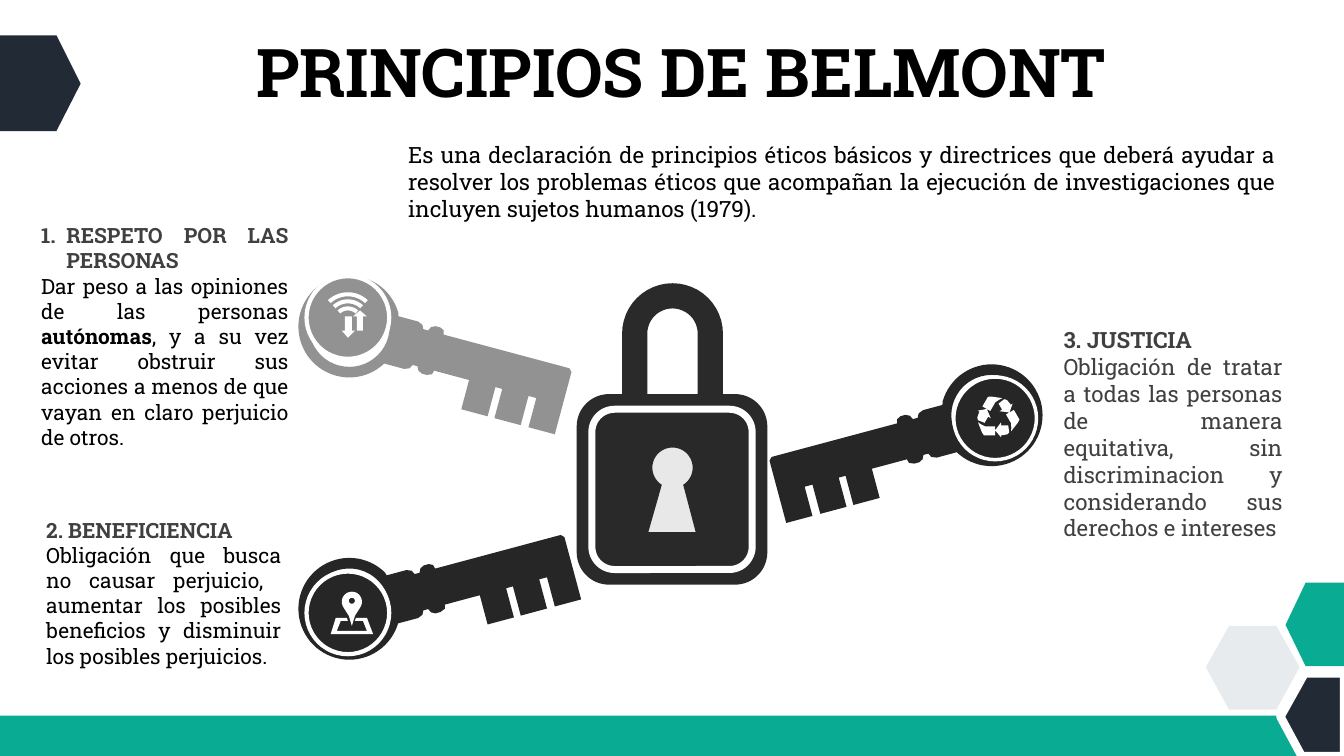
import math

import pptx
import pptx.dml.color
import pptx.enum.shapes
import pptx.enum.text
import pptx.oxml
import pptx.oxml.ns
import pptx.util
from pptx.util import Inches

SHAPE = pptx.enum.shapes.MSO_SHAPE
ALIGN = pptx.enum.text.PP_ALIGN
FONT = "Roboto Slab"
GREEN, NAVY, DARK, GREY, WHITE = "09AB93", "222A35", "262626", "929292", "FFFFFF"
BLACK, HEADING = "000000", "404040"
KEY_LENGTH = 2.75
KEY_BLADE = [
    (0.95, 0.28), (1.15, 0.28), (1.2, 0.3), (1.22, 0.34), (1.27, 0.34), (1.29, 0.3),
    (1.33, 0.28), (1.38, 0.28), (1.42, 0.3), (1.43, 0.34), (2.72, 0.34), (2.75, 0.37),
    (2.75, 1.01), (2.48, 1.01), (2.48, 0.71), (2.4, 0.71), (2.4, 1.01), (2.13, 1.01),
    (2.13, 0.71), (2.06, 0.71), (2.06, 1.01), (1.79, 1.01), (1.79, 0.71), (1.43, 0.71),
    (1.42, 0.75), (1.37, 0.77), (1.32, 0.77), (1.28, 0.75), (1.26, 0.71), (1.21, 0.71),
    (1.19, 0.75), (1.14, 0.77), (0.94, 0.77),
]


def rgb(color):
    return pptx.dml.color.RGBColor.from_string(color)


def arc(cx, cy, r, start, end, steps=24):
    angles = [math.radians(start + (end - start) * i / steps) for i in range(steps + 1)]
    return [(cx + r * math.cos(a), cy + r * math.sin(a)) for a in angles]


def style(sp, fill, line=None, width=0, opacity=100):
    sp.shadow.inherit = False
    sp.fill.solid()
    sp.fill.fore_color.rgb = rgb(fill)
    if opacity < 100:
        clr = sp.fill._xPr.find(".//" + pptx.oxml.ns.qn("a:srgbClr"))
        alpha = clr.makeelement(pptx.oxml.ns.qn("a:alpha"), {"val": str(opacity * 1000)})
        clr.append(alpha)
    if line:
        sp.line.color.rgb = rgb(line)
        sp.line.width = pptx.util.Pt(width)
    else:
        sp.line.fill.background()
    return sp


def add_outline(s, contours, fill, at=(0, 0), **look):
    builder = None
    for contour in contours:
        points = [(Inches(x), Inches(y)) for x, y in contour]
        if builder is None:
            builder = s.shapes.build_freeform(*points[0])
        else:
            builder.move_to(*points[0])
        builder.add_line_segments(points[1:], close=True)
    sp = builder.convert_to_shape(Inches(at[0]), Inches(at[1]))
    return style(sp, fill, **look)


def add_preset(s, kind, x, y, w, h, fill, **look):
    sp = s.shapes.add_shape(kind, Inches(x), Inches(y), Inches(w), Inches(h))
    return style(sp, fill, **look)


def add_text(s, x, y, w, h, paragraphs, size, align=ALIGN.JUSTIFY):
    tf = s.shapes.add_textbox(Inches(x), Inches(y), Inches(w), Inches(h)).text_frame
    tf.word_wrap = True
    for i, runs in enumerate(paragraphs):
        p = tf.paragraphs[0] if i == 0 else tf.add_paragraph()
        p.alignment = align
        for text, color, bold in runs:
            r = p.add_run()
            r.text = text
            r.font.name = FONT
            r.font.size = pptx.util.Pt(size)
            r.font.bold = bold
            r.font.color.rgb = rgb(color)
    return tf


def number(p):
    pPr = p._p.get_or_add_pPr()
    pPr.set("marL", str(Inches(0.25)))
    pPr.set("indent", str(-Inches(0.25)))
    bullet = pPr.makeelement(pptx.oxml.ns.qn("a:buAutoNum"), {"type": "arabicPeriod"})
    pPr.append(bullet)


def add_key(s, x, y, angle, color, badge, ring, mirrored=False):
    contours = [KEY_BLADE + arc(0.505, 0.505, 0.505, 31, 329, 60),
                arc(0.505, 0.505, 0.4, 0, 360, 48)]
    if mirrored:
        contours = [[(KEY_LENGTH - px, py) for px, py in c] for c in contours]
    add_outline(s, contours, color, (x, y)).rotation = angle
    add_preset(s, SHAPE.OVAL, *badge, 0.82, 0.82, color, line=WHITE, width=ring).rotation = 15


def add_padlock(s):
    body = (arc(6.67, 3.31, 0.5, 180, 360) + [(7.17, 3.91)]
            + arc(7.29, 4.23, 0.32, -90, 0) + arc(7.29, 5.48, 0.32, 0, 90)
            + arc(6.04, 5.48, 0.32, 90, 180) + arc(6.04, 4.23, 0.32, 180, 270)
            + [(6.17, 3.91)])
    shackle = arc(6.67, 3.31, 0.25, 180, 360) + [(6.92, 3.91), (6.42, 3.91)]
    keyhole = arc(6.67, 4.64, 0.2, 122, 418, 36) + [(6.9, 5.28), (6.43, 5.28)]
    add_outline(s, [body, shackle, keyhole], DARK, opacity=98)
    frame = add_preset(s, SHAPE.ROUNDED_RECTANGLE, 5.87, 4.06, 1.59, 1.59, DARK,
                       line=WHITE, width=5, opacity=10)
    frame.adjustments[0] = 0.142


def add_signal_icon(s):
    waves = [arc(3.45, 3.19, r, 227, 313) + arc(3.45, 3.19, r - 0.04, 313, 227)
             for r in (0.29, 0.22, 0.15)]
    down = [(3.42, 3.14), (3.49, 3.14), (3.49, 3.28), (3.52, 3.28), (3.45, 3.35),
            (3.39, 3.28), (3.42, 3.28)]
    up = [(3.57, 3.08), (3.64, 3.14), (3.6, 3.14), (3.6, 3.28), (3.54, 3.28),
          (3.54, 3.14), (3.5, 3.14)]
    add_outline(s, waves + [down, up], WHITE)


def add_map_icon(s):
    base = [(3.33, 6.13), (3.44, 6.13), (3.45, 6.16), (3.38, 6.16), (3.34, 6.26),
            (3.64, 6.26), (3.6, 6.16), (3.52, 6.16), (3.53, 6.13), (3.64, 6.13),
            (3.7, 6.29), (3.28, 6.29)]
    pin = arc(3.49, 5.97, 0.1, 145, 395) + [(3.52, 6.11), (3.49, 6.21), (3.46, 6.11)]
    add_outline(s, [base, pin, arc(3.49, 5.96, 0.03, 0, 360)], WHITE)


def add_recycle_icon(s):
    head = [(0.04, 0.05), (0.04, 0.08), (0.11, 0.08), (0.12, 0.15), (0.1, 0.17),
            (0.04, 0.18), (0.04, 0.2), (-0.02, 0.13)]
    band = [(-0.19, 0.05), (-0.16, 0.07), (-0.12, 0.09), (-0.02, 0.09), (-0.02, 0.18),
            (-0.13, 0.18), (-0.15, 0.15)]
    contours = []
    for turn in (0, 120, 240):
        c, n = math.cos(math.radians(turn)), math.sin(math.radians(turn))
        for part in (head, band):
            contours.append([(9.89 + x * c - y * n, 4.14 + x * n + y * c) for x, y in part])
    add_outline(s, contours, WHITE)


def add_decoration(s):
    add_outline(s, [[(11.96, 6.62), (12.19, 6.21), (12.66, 6.21), (12.89, 6.62),
                     (12.66, 7.04), (12.19, 7.04)]], "D9DEE2", opacity=60)
    add_outline(s, [[(12.95, 5.78), (13.33, 5.78), (13.33, 6.61), (12.95, 6.61),
                     (12.75, 6.2)]], GREEN)
    add_preset(s, SHAPE.RECTANGLE, 0, 7.1, 13.33, 0.4, GREEN)
    add_outline(s, [[(0, 0.35), (0.56, 0.35), (0.8, 0.83), (0.56, 1.3), (0, 1.3)]], NAVY)
    add_outline(s, [[(13.33, 6.68), (13.33, 7.5), (12.91, 7.5), (12.7, 7.11),
                     (12.94, 6.68)]], NAVY, line=WHITE, width=6)


def add_texts(s):
    tf = add_text(s, 0.98, 0.36, 11.56, 0.79,
                  [[("PRINCIPIOS DE BELMONT", BLACK, True)]], 48, ALIGN.CENTER)
    tf.vertical_anchor = pptx.enum.text.MSO_ANCHOR.MIDDLE
    tf.paragraphs[0].line_spacing = 0.9
    tf.paragraphs[0].space_before = pptx.util.Pt(10)
    add_text(s, 3.95, 1.35, 8.8, 0.91, [[(
        "Es una declaración de principios éticos básicos y directrices que deberá ayudar a "
        "resolver los problemas éticos que acompañan la ejecución de investigaciones que "
        "incluyen sujetos humanos (1979).", BLACK, False)]], 16)
    add_text(s, 10.45, 3.19, 2.37, 2.52, [
        [("3. JUSTICIA", HEADING, True)],
        [("Obligación de tratar a todas las personas de manera equitativa, sin "
          "discriminacion y considerando sus derechos e intereses", HEADING, False)]], 16)
    tf = add_text(s, 0.31, 2.16, 2.65, 2.37, [
        [("RESPETO POR LAS PERSONAS", HEADING, True)],
        [("Dar peso a las opiniones de las personas ", BLACK, False),
         ("autónomas", BLACK, True),
         (", y a su vez evitar obstruir sus acciones a menos de que vayan en claro "
          "perjuicio de otros.", BLACK, False)]], 15)
    number(tf.paragraphs[0])
    add_text(s, 0.36, 5.08, 2.53, 1.62, [
        [("2. BENEFICIENCIA", HEADING, True)],
        [("Obligación que busca no causar perjuicio,  aumentar los posibles beneficios y "
          "disminuir los posibles perjuicios.", BLACK, False)]], 15)


def main():
    prs = pptx.Presentation()
    prs.slide_width, prs.slide_height = Inches(13.33), Inches(7.5)
    s = prs.slides.add_slide(prs.slide_layouts[6])
    add_decoration(s)
    add_padlock(s)
    add_key(s, 2.93, 5.31, 345, DARK, (3.04, 5.67), 3)
    add_map_icon(s)
    add_key(s, 2.93, 2.96, 15, GREY, (3.04, 2.74), 3)
    add_signal_icon(s)
    add_key(s, 7.62, 3.84, 345, DARK, (9.46, 3.74), 2.5, mirrored=True)
    add_recycle_icon(s)
    add_texts(s)
    prs.save("out.pptx")


if __name__ == "__main__":
    main()
